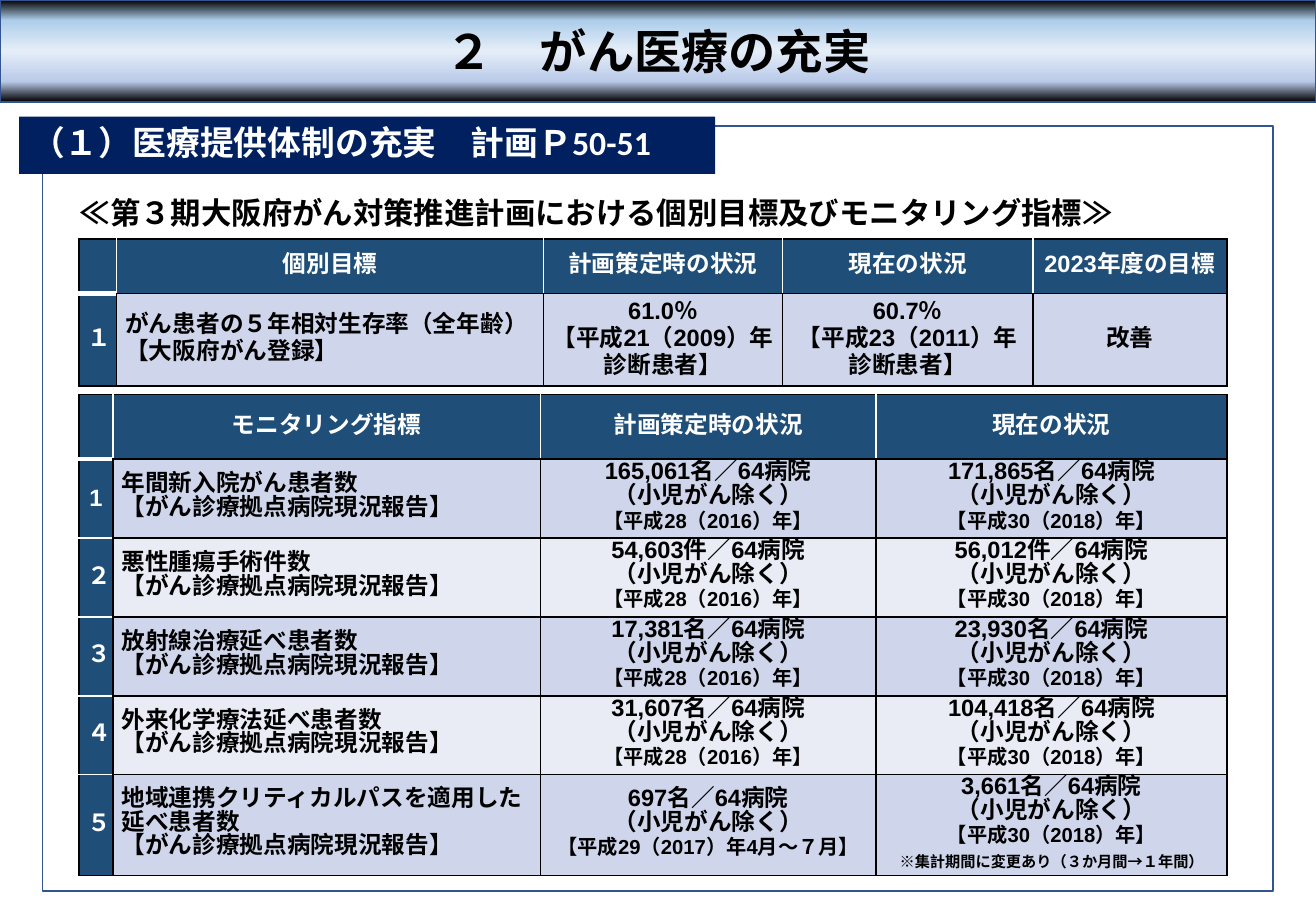
import pptx
import pptx.chart.data
import pptx.dml.color
import pptx.enum.shapes
import pptx.enum.text
import pptx.oxml
import pptx.oxml.ns
import pptx.util
from lxml import etree

Cm, Pt = pptx.util.Cm, pptx.util.Pt
RGB = pptx.dml.color.RGBColor
ALIGN = pptx.enum.text.PP_ALIGN
MIDDLE = pptx.enum.text.MSO_ANCHOR.MIDDLE
qn = pptx.oxml.ns.qn

BLACK = RGB(0x00, 0x00, 0x00)
WHITE = RGB(0xFF, 0xFF, 0xFF)
EDGE = RGB(0x32, 0x54, 0x91)
NAVY = RGB(0x00, 0x20, 0x60)
HEAD = RGB(0x1F, 0x4E, 0x79)
BANDS = (RGB(0xCF, 0xD5, 0xEA), RGB(0xE9, 0xEB, 0xF5))
GLOW = ((0, BLACK), (20, RGB(0xAD, 0xCD, 0xEA)), (50, RGB(0xE5, 0xEE, 0xF8)),
        (80, RGB(0xB9, 0xCA, 0xE9)), (100, BLACK))
CJK = "Noto Sans CJK JP"

GOALS = (
    ("", "個別目標", "計画策定時の状況", "現在の状況", "2023年度の目標"),
    ("１", "がん患者の５年相対生存率（全年齢）\n【大阪府がん登録】",
     "61.0％\n【平成21（2009）年診断患者】",
     "60.7％\n【平成23（2011）年診断患者】", "改善"),
)
REPORT = "【がん診療拠点病院現況報告】"
COUNTS = (
    ("1", "年間新入院がん患者数\v", "165,061名", "171,865名"),
    ("２", "悪性腫瘍手術件数\v", "54,603件", "56,012件"),
    ("３", "放射線治療延べ患者数\v", "17,381名", "23,930名"),
    ("４", "外来化学療法延べ患者数\v", "31,607名", "104,418名"),
    ("５", "地域連携クリティカルパスを適用した延べ患者数\n", "697名", "3,661名"),
)


def style(para, size, face, color, align=ALIGN.LEFT, pitch=None):
    para.alignment = align
    if pitch:
        para.line_spacing = Pt(pitch)
    for run in para.runs:
        font = run.font
        font.size, font.name, font.bold = Pt(size), face, True
        font.color.rgb = color
        east = etree.SubElement(run._r.get_or_add_rPr(), qn("a:ea"))
        east.set("typeface", CJK)


def panel(slide, box, fill=None, line=None):
    """Add a plain rectangle."""
    rect = slide.shapes.add_shape(
        pptx.enum.shapes.MSO_SHAPE.RECTANGLE, *map(Cm, box))
    rect.shadow.inherit = False
    if fill is not None:
        rect.fill.solid()
        rect.fill.fore_color.rgb = fill
    if line is None:
        rect.line.fill.background()
    else:
        rect.line.color.rgb = line
        rect.line.width = Pt(1)
    rect.text_frame.vertical_anchor = MIDDLE
    return rect


def banner(slide, box, text):
    rect = panel(slide, box, line=EDGE)
    rect.fill.gradient()
    rect.fill.gradient_angle = 270
    stops = rect._element.spPr.find(".//" + qn("a:gsLst"))
    for stop in list(stops):
        stops.remove(stop)
    for place, color in GLOW:
        stop = etree.SubElement(stops, qn("a:gs"), pos=str(place * 1000))
        etree.SubElement(stop, qn("a:srgbClr"), val=str(color))
    rect.text_frame.text = text
    style(rect.text_frame.paragraphs[0], 28, CJK, BLACK, ALIGN.CENTER)


def section(slide, box, text):
    frame = panel(slide, box, NAVY).text_frame
    frame.text = text
    style(frame.paragraphs[0], 20, "Calibri", WHITE, pitch=20)


def caption(slide, box, text):
    frame = slide.shapes.add_textbox(*map(Cm, box)).text_frame
    frame.word_wrap = True
    frame.text = text
    style(frame.paragraphs[0], 18, "Calibri", BLACK)


def border(cell, row, col, last, end):
    """Rule the cell: white lines inside the dark cells, black elsewhere."""
    sides = {"L": (BLACK, 1), "R": (BLACK, 1), "T": (BLACK, 1), "B": (BLACK, 1)}
    if row == 0:
        if col > 0:
            sides["L"] = (WHITE, 1)
        if col < end:
            sides["R"] = (WHITE, 1)
        if col == 0:
            sides["B"] = (WHITE, 3)
    elif col == 0:
        sides["T"] = (WHITE, 3 if row == 1 else 1)
        if row < last:
            sides["B"] = (WHITE, 1)
    props = cell._tc.get_or_add_tcPr()
    for side, (color, width) in sides.items():
        line = etree.SubElement(props, qn("a:ln" + side), w=str(Pt(width)))
        solid = etree.SubElement(line, qn("a:solidFill"))
        etree.SubElement(solid, qn("a:srgbClr"), val=str(color))


def grid(slide, box, data, widths, heights, sizes, pitch):
    """Add a table; sizes holds the text size of each paragraph in a cell."""
    table = slide.shapes.add_table(len(data), len(widths), *map(Cm, box)).table
    for col, width in enumerate(widths):
        table.columns[col].width = Cm(width)
    for row, height in enumerate(heights):
        table.rows[row].height = Cm(height)
        for col, text in enumerate(data[row]):
            cell = table.cell(row, col)
            dark = row == 0 or col == 0
            border(cell, row, col, len(data) - 1, len(widths) - 1)
            cell.fill.solid()
            cell.fill.fore_color.rgb = HEAD if dark else BANDS[(row - 1) % 2]
            cell.margin_left = cell.margin_right = Cm(0.18)
            cell.margin_top = cell.margin_bottom = 0
            cell.vertical_anchor = MIDDLE
            cell.text_frame.text = text
            align = ALIGN.LEFT if col == 1 and row > 0 else ALIGN.CENTER
            for para, size in zip(cell.text_frame.paragraphs, sizes):
                style(para, size, "Arial", WHITE if dark else BLACK, align,
                      16 if dark else pitch)


def monitor():
    """Build the rows of the indicator table."""
    rows = [("", "モニタリング指標", "計画策定時の状況", "現在の状況")]
    for mark, name, old, new in COUNTS:
        final = mark == "５"
        then = "29（2017）年4月～７月" if final else "28（2016）年"
        note = "\n※集計期間に変更あり（３か月間→１年間）" if final else ""
        scope = "／64病院\n（小児がん除く）\n【平成"
        rows.append((mark, name + REPORT, f"{old}{scope}{then}】",
                     f"{new}{scope}30（2018）年】{note}"))
    return rows


def main():
    deck = pptx.Presentation()
    deck.slide_width, deck.slide_height = Cm(27.51), Cm(19.05)
    slide = deck.slides.add_slide(deck.slide_layouts[6])
    panel(slide, (0.89, 2.64, 25.73, 16), WHITE, EDGE)
    grid(slide, (1.65, 5, 24, 3.07), GOALS,
         (0.79, 8.92, 5, 5.23, 4.06), (1.14, 1.93), (14, 14), 16)
    grid(slide, (1.65, 8.25, 24, 10.06), monitor(),
         (0.71, 8.94, 7.01, 7.34), (1.35, *[1.65] * 4, 2.11),
         (14, 14, 12, 9), 14)
    banner(slide, (0, 0, 27.51, 2.13), "２　がん医療の充実")
    section(slide, (0.4, 2.44, 14.55, 1.2), "（１）医療提供体制の充実　計画Ｐ50-51")
    caption(slide, (1.42, 3.94, 22.58, 1.02),
            "≪第３期大阪府がん対策推進計画における個別目標及びモニタリング指標≫")
    deck.save("out.pptx")


if __name__ == "__main__":
    main()
